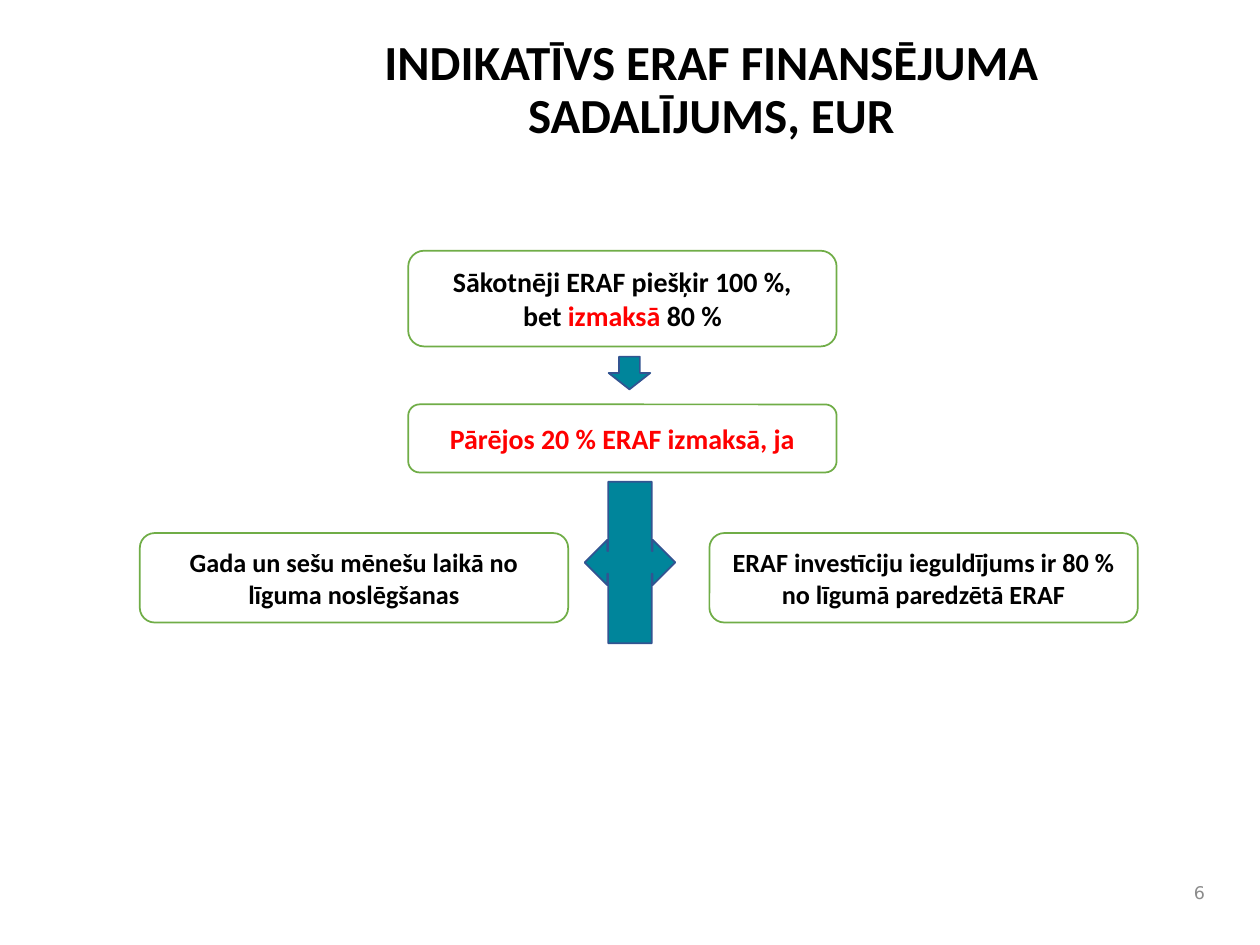
from pptx import Presentation
from pptx.dml.color import RGBColor
from pptx.enum.shapes import MSO_SHAPE
from pptx.enum.text import MSO_ANCHOR, MSO_AUTO_SIZE, PP_ALIGN
from pptx.util import Pt

ROUNDED = MSO_SHAPE.ROUNDED_RECTANGLE
DOWN_ARROW = MSO_SHAPE.DOWN_ARROW
TWO_WAY_CALLOUT = MSO_SHAPE.LEFT_RIGHT_ARROW_CALLOUT
CENTER, RIGHT = PP_ALIGN.CENTER, PP_ALIGN.RIGHT
TOP, MIDDLE = MSO_ANCHOR.TOP, MSO_ANCHOR.MIDDLE

BLACK, RED, WHITE, GREEN = "000000", "FF0000", "FFFFFF", "70AD47"
TEAL, NAVY, GRAY = "00859B", "325491", "8C8C8C"
BOX_WIDTH = 244.8

TITLE = "INDIKATĪVS ERAF FINANSĒJUMA SADALĪJUMS, EUR"
BOXES = [
    (233.3, 143.3, 54.7, 16, [
        [("Sākotnēji ERAF piešķir 100 %,", BLACK)],
        [("bet ", BLACK), ("izmaksā", RED), (" 80 %", BLACK)],
    ]),
    (233.3, 231.1, 38.9, 16, [[("Pārējos 20 % ERAF izmaksā, ja", RED)]]),
    (79.9, 304.6, 51.1, 15,
     [[("Gada un sešu mēnešu laikā no līguma noslēgšanas", BLACK)]]),
    (405.4, 304.6, 51.1, 15,
     [[("ERAF investīciju ieguldījums ir 80 % no līgumā paredzētā ERAF", BLACK)]]),
]
ARROWS = [
    (DOWN_ARROW, 347.8, 203.8, 23.8, 18.7),
    (TWO_WAY_CALLOUT, 334.1, 275.3, 51.8, 92.2),
]


def color(value):
    return RGBColor.from_string(value)


def add_shape(slide, kind, left, top, width, height, fill, line):
    shape = slide.shapes.add_shape(kind, Pt(left), Pt(top), Pt(width), Pt(height))
    shape.shadow.inherit = False
    shape.fill.solid()
    shape.fill.fore_color.rgb = color(fill)
    shape.line.color.rgb = color(line)
    shape.line.width = Pt(1)
    return shape


def write(shape, paragraphs, size, anchor=MIDDLE, align=CENTER, bold=True, font="Calibri"):
    frame = shape.text_frame
    frame.word_wrap = True
    frame.auto_size = MSO_AUTO_SIZE.NONE
    frame.vertical_anchor = anchor
    for index, runs in enumerate(paragraphs):
        paragraph = frame.add_paragraph() if index else frame.paragraphs[0]
        paragraph.alignment = align
        paragraph.font.name = font
        paragraph.font.size = Pt(size)
        paragraph.font.bold = bold
        for text, run_color in runs:
            run = paragraph.add_run()
            run.text = text
            run.font.color.rgb = color(run_color)


def main():
    presentation = Presentation()
    presentation.slide_width, presentation.slide_height = Pt(720), Pt(540)
    slide = presentation.slides.add_slide(presentation.slide_layouts[5])

    title = slide.shapes.title
    title.left, title.top, title.width, title.height = Pt(162.7), Pt(18), Pt(487.4), Pt(68.4)
    write(title, [[(TITLE, BLACK)]], 28, anchor=TOP)
    title.text_frame.paragraphs[0].line_spacing = 0.9

    for left, top, height, size, paragraphs in BOXES:
        box = add_shape(slide, ROUNDED, left, top, BOX_WIDTH, height, WHITE, GREEN)
        write(box, paragraphs, size)
    for kind, left, top, width, height in ARROWS:
        add_shape(slide, kind, left, top, width, height, TEAL, NAVY)

    number = slide.shapes.add_textbox(Pt(671.8), Pt(498.2), Pt(23.8), Pt(23.8))
    write(number, [[("6", GRAY)]], 10, align=RIGHT, bold=False, font="DejaVu Sans")

    presentation.save("out.pptx")


if __name__ == "__main__":
    main()
